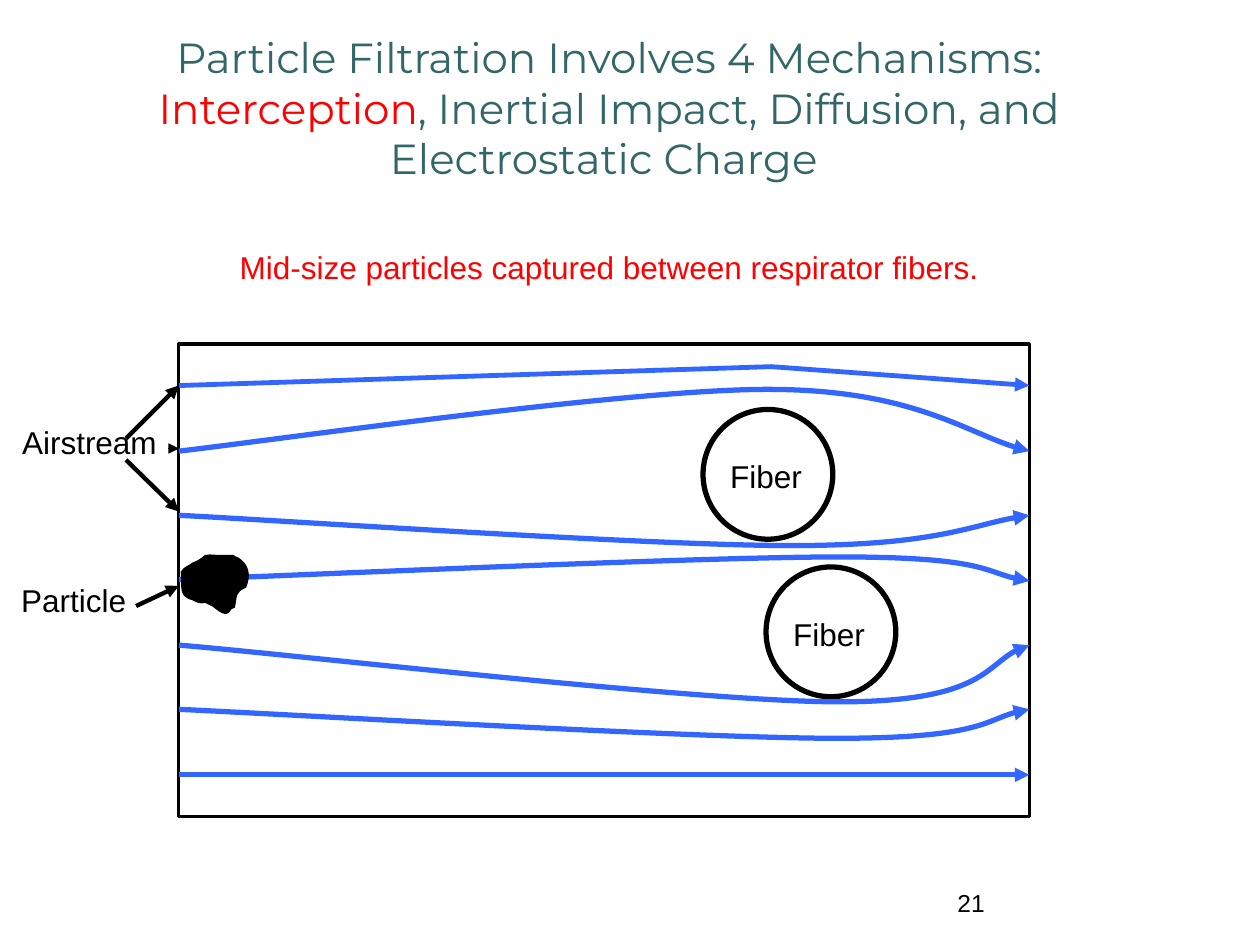
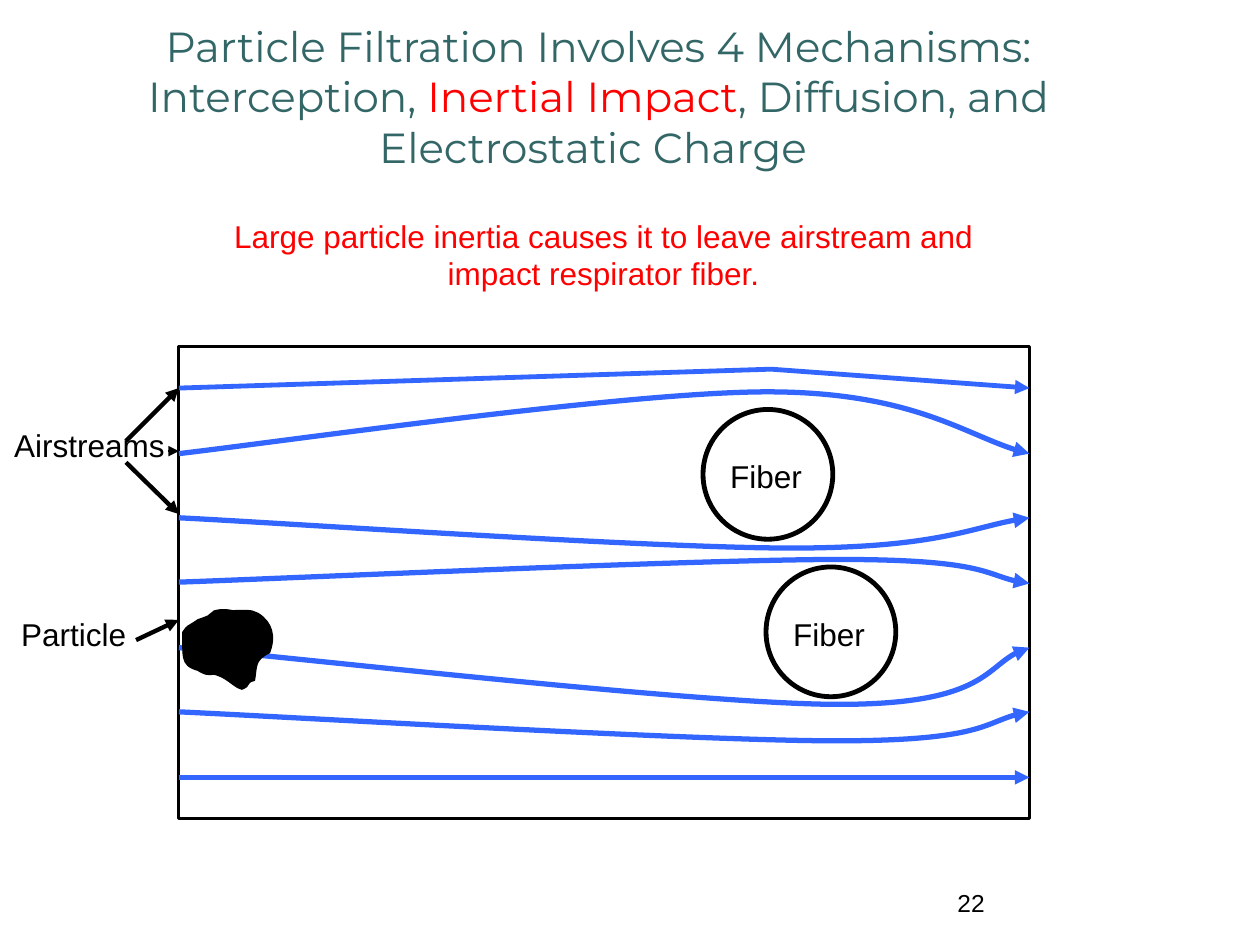
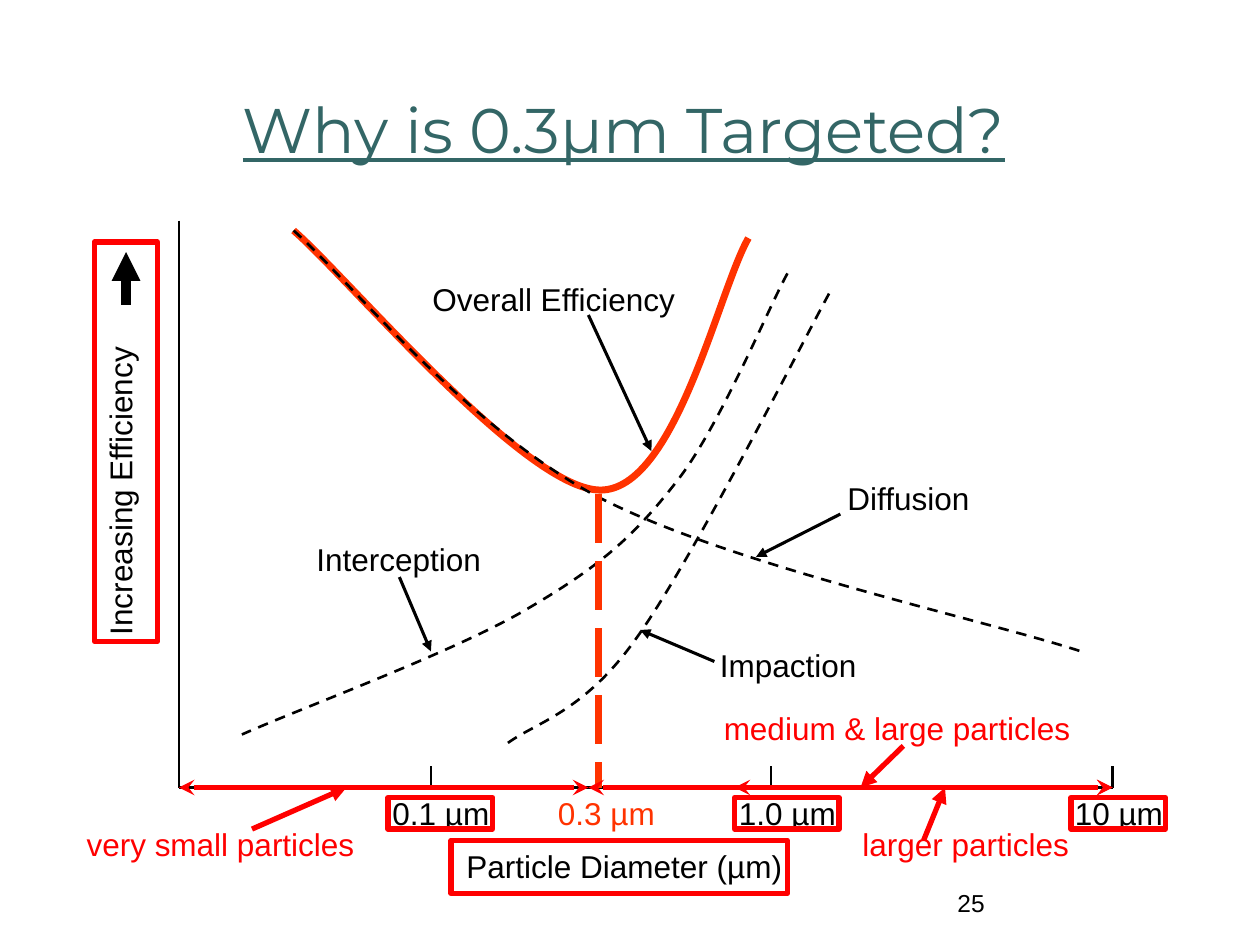
from dataclasses import dataclass
from itertools import chain

from lxml import etree
from pptx import Presentation
from pptx.dml.color import RGBColor
from pptx.enum.dml import MSO_LINE
from pptx.enum.shapes import MSO_CONNECTOR, MSO_SHAPE
from pptx.enum.text import MSO_ANCHOR, MSO_AUTO_SIZE, PP_ALIGN
from pptx.oxml.ns import qn
from pptx.util import Pt

PX = 9144  # EMU per px, 100 px to the inch
RECT, OVAL = MSO_SHAPE.RECTANGLE, MSO_SHAPE.OVAL
STRAIGHT = MSO_CONNECTOR.STRAIGHT
DASH, LONG_DASH = MSO_LINE.DASH, MSO_LINE.LONG_DASH
LEFT, CENTER = PP_ALIGN.LEFT, PP_ALIGN.CENTER
BOTTOM = MSO_ANCHOR.BOTTOM
GROW, FIXED = MSO_AUTO_SIZE.SHAPE_TO_FIT_TEXT, MSO_AUTO_SIZE.NONE


@dataclass(frozen=True)
class Theme:
    ink: str = "000000"
    paper: str = "FFFFFF"
    title: str = "336666"
    accent: str = "FF0000"
    stream: str = "3366FF"
    target: str = "FF3300"
    title_font: str = "Montserrat"
    body_font: str = "Arial"
    title_size: int = 24
    question_size: int = 36
    body_size: int = 18
    number_size: int = 14


THEME = Theme()


@dataclass(frozen=True)
class Label:
    text: str
    x: int
    y: int
    w: int
    h: int = 40
    color: str = THEME.ink
    size: int = THEME.body_size
    font: str = THEME.body_font
    align: PP_ALIGN = CENTER
    grow: bool = True
    wrap: bool = True
    highlight: str = ""


@dataclass(frozen=True)
class Stroke:
    color: str = THEME.ink
    width: float = 1.5
    head: str = ""
    tail: str = ""
    dash: MSO_LINE | None = None


@dataclass(frozen=True)
class Line:
    x1: int
    y1: int
    x2: int
    y2: int
    stroke: Stroke = Stroke()


@dataclass(frozen=True)
class Box:
    x: int
    y: int
    w: int
    h: int


@dataclass(frozen=True)
class Curve:
    points: tuple[tuple[int, int], ...]
    stroke: Stroke
    bezier: bool = True


@dataclass(frozen=True)
class FilterSlide:
    number: int
    highlight: str
    title_box: Box
    caption: Label
    airstream: str
    shift: int  # downward shift of panel and airstreams
    fiber_fill: str
    fiber_width: float
    blob_y: int
    blob_scale: float
    particle_y: int
    particle_arrow: Line


AXIS = Stroke()
POINTER = Stroke(width=1.75, tail="triangle")
INFLOW = Stroke(width=2.5, tail="triangle")
RED_POINTER = Stroke(THEME.accent, 3, tail="triangle")
RED_RANGE = Stroke(THEME.accent, 3, "stealth", "stealth")
DASHED = Stroke(dash=DASH)
THIN_FLOW = Stroke(THEME.stream, 2.75, tail="triangle")
FLOW = Stroke(THEME.stream, 3, tail="triangle")

# Filter panel content
PANEL = Box(142, 273, 675, 375)
FIBERS = (Box(558, 325, 103, 103), Box(608, 450, 103, 103))
STREAMS = (
    Curve(((142, 306), (612, 291), (817, 306)), THIN_FLOW, bezier=False),
    Curve(((142, 358), (220, 349), (497, 309), (609, 309),
           (722, 309), (773, 348), (817, 358)), FLOW),
    Curve(((142, 409), (223, 413), (516, 433), (628, 433),
           (741, 433), (777, 414), (817, 409)), FLOW),
    Curve(((142, 460), (229, 457), (553, 442), (666, 442),
           (778, 442), (785, 457), (817, 461)), FLOW),
    Curve(((142, 512), (229, 519), (553, 557), (666, 557),
           (778, 557), (785, 521), (817, 512)), FLOW),
    Curve(((142, 563), (229, 567), (551, 586), (664, 586),
           (776, 586), (785, 568), (817, 563)), FLOW),
)
BLOB = (
    (48, 3), (40, 1), (35, 0), (28, 2), (26, 3), (25, 5), (23, 6),
    (21, 7), (15, 9), (15, 9), (5, 16), (8, 12), (3, 19),
    (4, 36), (0, 45), (15, 49), (20, 52), (22, 53), (28, 52),
    (31, 53), (34, 54), (37, 56), (42, 59), (44, 62), (50, 64),
    (58, 61), (52, 59), (60, 57), (62, 45), (60, 41), (72, 35),
    (77, 22), (74, 11), (63, 4), (61, 4), (60, 2), (58, 2),
    (51, 1), (43, 2), (36, 2),
)
TITLE_PARTS = ("Particle Filtration Involves 4 Mechanisms: Interception, "
               "Inertial Impact, Diffusion, and Electrostatic Charge ")
FILTER_SLIDES = (
    FilterSlide(21, "Interception", Box(75, 8, 817, 142),
                Label("Mid-size particles captured between respirator fibers.",
                      150, 192, 667, color=THEME.accent),
                "Airstream", 0, THEME.paper, 3, 440, 0.74, 456,
                Line(108, 481, 142, 465, INFLOW)),
    FilterSlide(22, "Inertial Impact", Box(71, 8, 808, 133),
                Label("Large particle inertia causes it to leave airstream "
                      "and impact respirator fiber.",
                      150, 167, 658, 70, color=THEME.accent),
                "Airstreams", 2, "", 2.75, 483, 1, 483,
                Line(108, 508, 142, 492, INFLOW)),
)

# Efficiency diagram content
BASE_Y = 625
TICKS = (342, 612, 883)
AXES = (Line(142, 175, 142, BASE_Y), Line(142, BASE_Y, 883, BASE_Y),
        *(Line(x, 608, x, BASE_Y) for x in TICKS))
AXIS_LABELS = (
    Label("0.1 µm", 300, BASE_Y, 100),
    Label("1.0 µm", 575, BASE_Y, 100),
    Label("10 µm", 842, BASE_Y, 92),
    Label("Particle Diameter (µm)", 358, 667, 275),
)
CURVES = (
    Curve(((233, 183), (274, 218), (416, 388), (476, 389),
           (536, 390), (570, 231), (594, 189)), Stroke(THEME.target, 4)),
    Curve(((658, 233), (633, 279), (547, 449), (504, 508),
           (461, 568), (422, 574), (400, 592)), DASHED),
    Curve(((233, 183), (273, 218), (368, 337), (472, 393),
           (576, 448), (778, 491), (858, 517)), DASHED),
    Curve(((625, 217), (610, 244), (572, 337), (538, 381),
           (503, 426), (477, 449), (419, 483),
           (362, 517), (239, 562), (192, 583)), DASHED),
)
CALLOUTS = (
    (Label("Diffusion", 650, 375, 142), Line(667, 408, 600, 442, POINTER)),
    (Label("Interception", 233, 424, 167), Line(317, 458, 342, 517, POINTER)),
    (Label("Impaction", 542, 508, 167), Line(567, 525, 508, 500, POINTER)),
    (Label("Overall Efficiency", 333, 217, 213, wrap=False),
     Line(467, 250, 517, 358, POINTER)),
)
RANGE_CALLOUTS = (
    (Label("very small particles", 50, 650, 250, color=THEME.accent),
     Line(200, 658, 275, BASE_Y, RED_POINTER)),
    (Label("medium & large particles", 558, 558, 308, color=THEME.accent),
     Line(717, 592, 683, BASE_Y, RED_POINTER)),
    (Label("larger particles", 658, 650, 217, color=THEME.accent),
     Line(733, 667, 750, BASE_Y, RED_POINTER)),
)
RANGES = ((142, 467), (467, 883), (583, 883))
RED_BOXES = (Box(75, 192, 50, 317), Box(358, 667, 267, 42),
             Box(308, 633, 83, 25), Box(583, 633, 83, 25),
             Box(850, 633, 75, 25))


def rgb(color: str) -> RGBColor:
    return RGBColor.from_string(color)


def set_stroke(sp, stroke: Stroke) -> None:
    line = sp.line
    line.color.rgb = rgb(stroke.color)
    line.width = Pt(stroke.width)
    if stroke.dash is not None:
        line.dash_style = stroke.dash
    ln = sp.element.spPr.find(qn("a:ln"))
    for tag, kind in (("a:headEnd", stroke.head), ("a:tailEnd", stroke.tail)):
        if kind:
            etree.SubElement(ln, qn(tag), type=kind)


def set_fill(sp, color: str) -> None:
    if color:
        sp.fill.solid()
        sp.fill.fore_color.rgb = rgb(color)
    else:
        sp.fill.background()


def add_line(shapes, line: Line) -> None:
    ends = (v * PX for v in (line.x1, line.y1, line.x2, line.y2))
    sp = shapes.add_connector(STRAIGHT, *ends)
    set_stroke(sp, line.stroke)
    etree.SubElement(sp.element.spPr, qn("a:effectLst"))


def add_box(shapes, kind: MSO_SHAPE, box: Box, stroke: Stroke,
            fill: str = "", dy: int = 0) -> None:
    sp = shapes.add_shape(kind, box.x * PX, (box.y + dy) * PX,
                          box.w * PX, box.h * PX)
    sp.shadow.inherit = False
    set_fill(sp, fill)
    set_stroke(sp, stroke)


def add_curve(shapes, curve: Curve, dy: int = 0, fill: str = "") -> None:
    start, *rest = ((x, y + dy) for x, y in curve.points)
    builder = shapes.build_freeform(*start, scale=PX)
    builder.add_line_segments(rest, close=bool(fill))
    sp = builder.convert_to_shape()
    sp.shadow.inherit = False
    set_fill(sp, fill)
    set_stroke(sp, curve.stroke)
    if curve.bezier:
        # Merge every three line segments into one cubic curve
        outline = next(sp.element.iter(qn("a:path")))
        steps = outline.findall(qn("a:lnTo"))
        for i in range(0, len(steps), 3):
            cubic = etree.Element(qn("a:cubicBezTo"))
            outline.replace(steps[i], cubic)
            for step in steps[i:i + 3]:
                cubic.append(step[0])
            for step in steps[i + 1:i + 3]:
                outline.remove(step)


def add_label(shapes, label: Label):
    sp = shapes.add_textbox(*(v * PX for v in (label.x, label.y,
                                               label.w, label.h)))
    tf = sp.text_frame
    tf.word_wrap = label.wrap
    tf.auto_size = GROW if label.grow else FIXED
    p = tf.paragraphs[0]
    p.alignment = label.align
    p.font.name, p.font.size = label.font, Pt(label.size)
    p.font.color.rgb = rgb(label.color)
    if label.highlight:
        before, after = label.text.split(label.highlight)
        for text in (before, label.highlight, after):
            r = p.add_run()
            r.text = text
            if text == label.highlight:
                r.font.color.rgb = rgb(THEME.accent)
    else:
        p.add_run().text = label.text
    return sp


def add_slide(prs, number: int):
    slide = prs.slides.add_slide(prs.slide_layouts[6])
    slide.background.fill.solid()
    slide.background.fill.fore_color.rgb = rgb(THEME.paper)
    add_label(slide.shapes, Label(str(number), 750, 700, 175, 50, align=LEFT,
                                  size=THEME.number_size, grow=False))
    return slide.shapes


def build_filter_slide(prs, page: FilterSlide) -> None:
    shapes = add_slide(prs, page.number)
    dy = page.shift

    # Panel, fibers and airstreams
    add_box(shapes, RECT, PANEL, Stroke(width=1.75), dy=dy)
    for fiber in FIBERS:
        add_box(shapes, OVAL, fiber, Stroke(width=page.fiber_width),
                page.fiber_fill)
    add_line(shapes, Line(142, 615 + dy, 817, 615 + dy, THIN_FLOW))
    for stream in STREAMS:
        add_curve(shapes, stream, dy)

    # Particle
    blob = tuple((PANEL.x + round(x * page.blob_scale),
                  page.blob_y + round(y * page.blob_scale)) for x, y in BLOB)
    add_curve(shapes, Curve(blob, Stroke(width=0.75)), fill=THEME.ink)

    # Title, caption and labels
    box = page.title_box
    title = add_label(shapes, Label(
        TITLE_PARTS, box.x, box.y, box.w, box.h, THEME.title,
        THEME.title_size, THEME.title_font, grow=False,
        highlight=page.highlight))
    title.text_frame.vertical_anchor = BOTTOM
    add_label(shapes, page.caption)
    for fiber in FIBERS:
        add_label(shapes, Label("Fiber", fiber.x, fiber.y + 33, 100))

    particle = shapes.add_group_shape().shapes
    add_label(particle, Label("Particle", 0, page.particle_y, 117))
    add_line(particle, page.particle_arrow)

    air = shapes.add_group_shape().shapes
    add_label(air, Label(page.airstream, 0, 331 + dy, 142))
    add_line(air, Line(100, 365 + dy, 142, 406 + dy, INFLOW))
    add_line(air, Line(100, 348 + dy, 142, 306 + dy, INFLOW))
    add_line(air, Line(133, 356 + dy, 142, 356 + dy,
                       Stroke(width=0.75, tail="triangle")))


def build_efficiency_slide(prs) -> None:
    shapes = add_slide(prs, 25)
    title = add_label(shapes, Label(
        "Why is 0.3µm Targeted?", 183, 67, 683, 71, THEME.title,
        THEME.question_size, THEME.title_font, LEFT))
    title.text_frame.paragraphs[0].font.underline = True

    # Axes
    for axis in AXES:
        add_line(shapes, axis)
    for label in AXIS_LABELS:
        add_label(shapes, label)
    side = add_label(shapes, Label("Increasing Efficiency ", 75, 233, 50, 281))
    side.rotation = 180
    side.text_frame._txBody.bodyPr.set("vert", "eaVert")
    add_line(shapes, Line(100, 242, 100, 200,
                          Stroke(width=5.5, tail="triangle")))

    # Curves and the targeted size
    for curve in CURVES:
        add_curve(shapes, curve)
    target = shapes.add_group_shape().shapes
    add_line(target, Line(475, 392, 475, BASE_Y,
                          Stroke(THEME.target, 3.5, dash=LONG_DASH)))
    add_label(target, Label("0.3 µm", 433, BASE_Y, 104, color=THEME.target,
                            align=LEFT))

    # Callouts, particle ranges and frames
    for label, pointer in chain(CALLOUTS, RANGE_CALLOUTS):
        add_label(shapes, label)
        add_line(shapes, pointer)
    for box in RED_BOXES:
        add_box(shapes, RECT, box, Stroke(THEME.accent, 3))
    for x1, x2 in RANGES:
        add_line(shapes, Line(x1, BASE_Y, x2, BASE_Y, RED_RANGE))


def main() -> None:
    prs = Presentation()
    prs.slide_width, prs.slide_height = 1000 * PX, 750 * PX
    for page in FILTER_SLIDES:
        build_filter_slide(prs, page)
    build_efficiency_slide(prs)
    prs.save("out.pptx")


if __name__ == "__main__":
    main()
